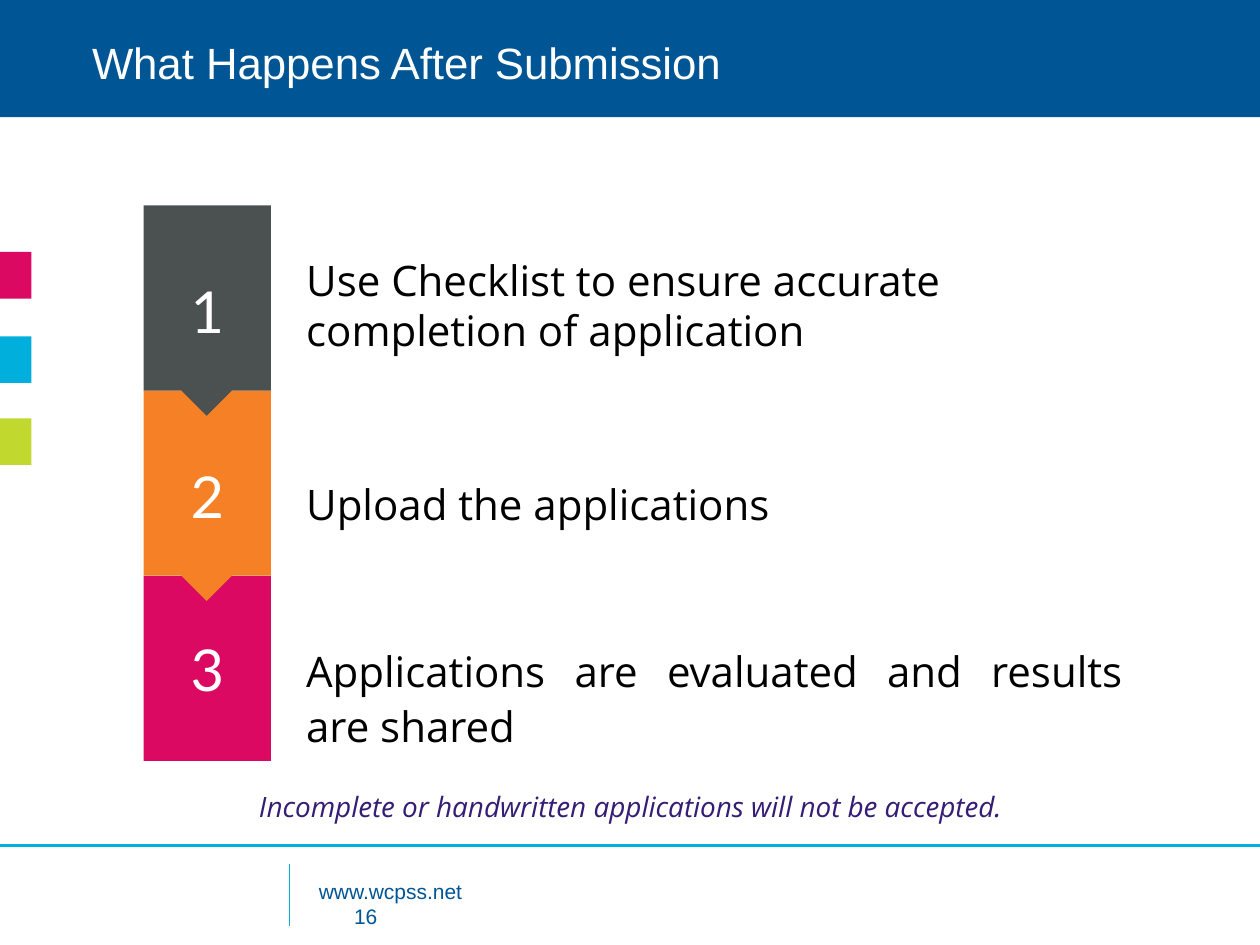
from lxml.etree import SubElement
from pptx import Presentation
from pptx.dml.color import RGBColor
from pptx.enum.shapes import MSO_CONNECTOR, MSO_SHAPE
from pptx.enum.text import MSO_ANCHOR, PP_ALIGN
from pptx.oxml.ns import qn
from pptx.util import Emu, Pt

PX = 9144  # 100 px to the inch

BLUE, CYAN, PINK, LIME = "005595", "00AFDB", "DB0962", "C1D82F"
ORANGE, GRAY, PURPLE, BLACK, WHITE = "F58025", "4B5050", "351C75", "000000", "FFFFFF"


def px(*lengths):
    return [Emu(length * PX) for length in lengths]


def color(hex_code):
    return RGBColor.from_string(hex_code)


def write(frame, text, font="Open Sans", size=24, ink=BLACK, italic=False,
          align=PP_ALIGN.LEFT, anchor=MSO_ANCHOR.MIDDLE, spacing=None,
          insets=(0, 0), indents=(0,)):
    """Fill a frame with one paragraph per line of text."""
    frame.word_wrap = True
    frame.vertical_anchor = anchor
    frame.margin_left, frame.margin_top = px(*insets)
    frame.margin_right, frame.margin_bottom = px(*insets)
    for index, (line, indent) in enumerate(zip(text.split("\n"), indents)):
        paragraph = frame.add_paragraph() if index else frame.paragraphs[0]
        paragraph.alignment = align
        paragraph.line_spacing = spacing
        if indent:
            paragraph._p.get_or_add_pPr().set("marL", str(indent * PX))
        run = paragraph.add_run()
        run.text = line
        run.font.name = font
        run.font.size = Pt(size)
        run.font.italic = italic
        run.font.color.rgb = color(ink)


class SlideBuilder:
    def __init__(self, slide):
        self.shapes = slide.shapes

    def paint(self, shape, fill):
        shape.shadow.inherit = False
        shape.fill.solid()
        shape.fill.fore_color.rgb = color(fill)
        shape.line.fill.background()
        return shape

    def block(self, left, top, width, height, fill):
        return self.paint(self.shapes.add_shape(
            MSO_SHAPE.RECTANGLE, *px(left, top, width, height)), fill)

    def notched_block(self, left, top, width, height, fill, notch=20):
        """Rectangle with a triangular pointer below its bottom edge."""
        right, bottom, middle = left + width, top + height, left + width // 2
        outline = self.shapes.build_freeform(left, top, scale=PX)
        outline.add_line_segments([
            (left, bottom), (middle - notch, bottom), (middle, bottom + notch),
            (middle + notch, bottom), (right, bottom), (right, top)])
        return self.paint(outline.convert_to_shape(), fill)

    def line(self, x1, y1, x2, y2, ink, weight):
        rule = self.shapes.add_connector(MSO_CONNECTOR.STRAIGHT, *px(x1, y1, x2, y2))
        rule.line.color.rgb = color(ink)
        rule.line.width = Pt(weight)
        SubElement(rule._element.spPr, qn("a:effectLst"))

    def text(self, left, top, width, height, text, **style):
        box = self.shapes.add_textbox(*px(left, top, width, height))
        write(box.text_frame, text, **style)


def main():
    deck = Presentation()
    deck.slide_width, deck.slide_height = px(1000, 750)
    page = SlideBuilder(deck.slides.add_slide(deck.slide_layouts[6]))

    # Side accents
    for top, accent in ((200, PINK), (267, CYAN), (332, LIME)):
        page.block(0, top, 25, 37, accent)

    # Footer
    page.line(0, 671, 1000, 671, CYAN, 2)
    page.line(230, 686, 230, 735, CYAN, 0.75)
    page.text(249, 695, 683, 45, "www.wcpss.net\n16", font="Arial", size=12, ink=BLUE,
              anchor=MSO_ANCHOR.TOP, insets=(4, 2), indents=(0, 28))

    # Title band
    page.block(0, 0, 1000, 93, BLUE)
    page.text(69, 12, 862, 80, "What Happens After Submission", font="Arial",
              size=25, ink=WHITE, spacing=0.9, insets=(4, 2))

    # Numbered steps, last first so that each pointer overlaps the next block
    steps_top, step_height = 163, 147
    steps = [
        (3, PINK, page.block, 503, "Applications are evaluated and results are shared",
         {"align": PP_ALIGN.JUSTIFY, "spacing": 1.1}),
        (2, ORANGE, page.notched_block, 351, "Upload the applications", {}),
        (1, GRAY, page.notched_block, 193,
         "Use Checklist to ensure accurate completion of application", {}),
    ]
    for number, fill, draw, text_top, step, style in steps:
        badge = draw(114, steps_top + (number - 1) * step_height, 101, step_height, fill)
        write(badge.text_frame, str(number), font="Lato", size=33, ink=WHITE,
              align=PP_ALIGN.CENTER)
        page.text(243, text_top, 648, 98, step, **style)

    # Closing note
    page.text(14, 617, 973, 47,
              "Incomplete or handwritten applications will not be accepted.",
              size=16, ink=PURPLE, italic=True, align=PP_ALIGN.CENTER,
              anchor=MSO_ANCHOR.TOP, insets=(10, 10))

    deck.save("out.pptx")


if __name__ == "__main__":
    main()
